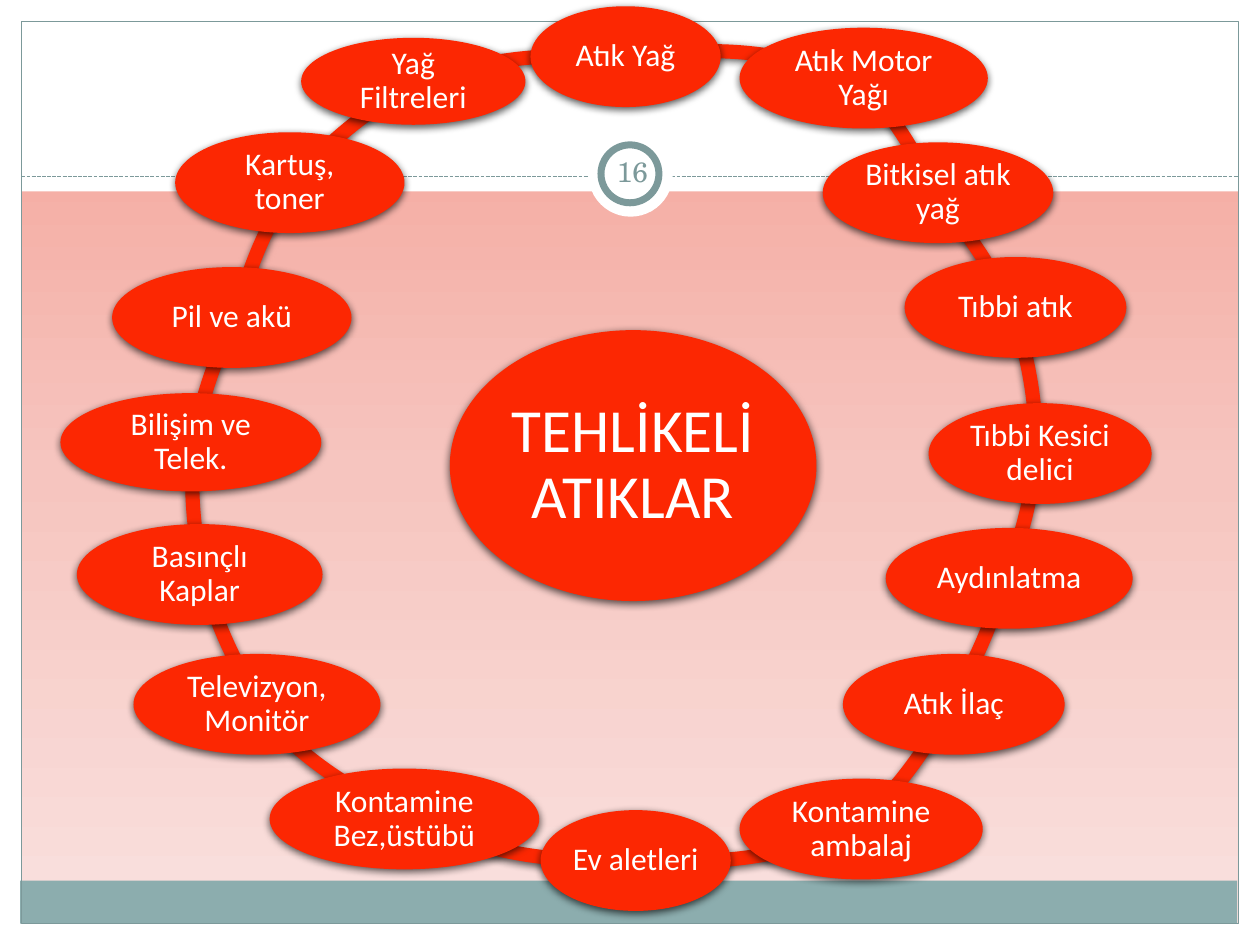
import pptx
import pptx.util
import pptx.dml.color
import pptx.enum.dml
import pptx.enum.shapes
import pptx.enum.text
import pptx.oxml
import pptx.oxml.ns
from pptx.util import Inches, Pt

RGBColor = pptx.dml.color.RGBColor
SHAPE = pptx.enum.shapes.MSO_SHAPE
WHITE = RGBColor(0xFF, 0xFF, 0xFF)
TEAL = RGBColor(0x7C, 0x99, 0x9A)
FOOTER_TEAL = RGBColor(0x8C, 0xAD, 0xAE)
RED = RGBColor(0xFC, 0x27, 0x02)
BACKGROUND_STOPS = [(0, "F4A095"), (50, "F6C5BF"), (100, "FAE2E0")]

ARC_SIZE = 6.6
ARC_THICKNESS = 0.017
ANGLE_UNIT = 0.6  # one degree, as a block arc adjustment

# Left, top, start and end angle in degrees, clockwise from the right
ARCS = [
    (1.18, 0.39, 248.31, 278.4),
    (1.52, 0.23, 219.55, 241.69),
    (1.74, -0.06, 192.7, 213.29),
    (1.44, 0.74, 189.45, 207.67),
    (1.47, 0.51, 166.85, 185.45),
    (1.46, 0.47, 146.31, 166.06),
    (1.17, 0.17, 114.89, 141.05),
    (1.38, 0.28, 83.73, 116.86),
    (2.2, 0.29, 66.02, 97.99),
    (1.33, 0.85, 25.95, 47.84),
    (1.52, 0.51, 13.86, 32.9),
    (1.69, 0.02, 4.88, 22.88),
    (1.68, 0.26, 340.07, 0.7),
    (1.76, 0.48, 316.5, 335.88),
    (1.14, -0.47, 317.39, 336.51),
    (2.33, 0.35, 258.2, 291.84),
]

# Waste type, left, top, width, height: clockwise from the top
WASTES = [
    ("Atık Yağ", 4.21, 0.05, 1.51, 0.8),
    ("Atık Motor Yağı", 5.87, 0.22, 1.97, 0.8),
    ("Bitkisel atık yağ", 6.53, 1.13, 1.83, 0.8),
    ("Tıbbi atık", 7.18, 2.04, 1.76, 0.8),
    ("Tıbbi Kesici delici", 7.37, 3.2, 1.77, 0.8),
    ("Aydınlatma", 7.03, 4.19, 1.96, 0.8),
    ("Atık İlaç", 6.69, 5.19, 1.76, 0.8),
    ("Kontamine ambalaj", 5.87, 6.18, 1.93, 0.8),
    ("Ev aletleri", 4.29, 6.43, 1.51, 0.8),
    ("Kontamine Bez,üstübü", 2.14, 6.1, 2.14, 0.8),
    ("Televizyon, Monitör", 1.06, 5.19, 1.96, 0.8),
    ("Basınçlı Kaplar", 0.61, 4.16, 1.95, 0.8),
    ("Bilişim ve Telek.", 0.48, 3.12, 2.07, 0.78),
    ("Pil ve akü", 0.89, 2.12, 1.9, 0.8),
    ("Kartuş, toner", 1.39, 1.05, 1.82, 0.8),
    ("Yağ Filtreleri", 2.39, 0.3, 1.78, 0.69),
]


def set_background(slide):
    fill = slide.background.fill
    fill.gradient()
    fill.gradient_angle = 270
    stops = slide.element.find(".//" + pptx.oxml.ns.qn("a:gsLst"))
    for stop in list(stops):
        stops.remove(stop)
    for percent, colour in BACKGROUND_STOPS:
        stops.append(pptx.oxml.parse_xml(
            f'<a:gs {pptx.oxml.ns.nsdecls("a")} pos="{percent * 1000}">'
            f'<a:srgbClr val="{colour}"/></a:gs>'))


def add_plain(slide, kind, left, top, width, height, fill=None, line=None, line_width=0.75):
    shape = slide.shapes.add_shape(
        kind, Inches(left), Inches(top), Inches(width), Inches(height))
    shape.shadow.inherit = False
    if fill is None:
        shape.fill.background()
    else:
        shape.fill.solid()
        shape.fill.fore_color.rgb = fill
    if line is None:
        shape.line.fill.background()
    else:
        shape.line.color.rgb = line
        shape.line.width = Pt(line_width)
    return shape


def add_red(slide, kind, left, top, width, height):
    """Red diagram part with a soft shadow below it."""
    shape = add_plain(slide, kind, left, top, width, height, RED)
    effects = shape.element.spPr.find(pptx.oxml.ns.qn("a:effectLst"))
    effects.append(pptx.oxml.parse_xml(
        f'<a:outerShdw {pptx.oxml.ns.nsdecls("a")} blurRad="{Pt(4.5)}" dist="{Pt(1.5)}" '
        'dir="5400000" rotWithShape="0"><a:srgbClr val="000000">'
        '<a:alpha val="63000"/></a:srgbClr></a:outerShdw>'))
    return shape


def write_centred(shape, text, size, font, colour, inset):
    frame = shape.text_frame
    frame.word_wrap = True
    frame.vertical_anchor = pptx.enum.text.MSO_ANCHOR.MIDDLE
    frame.margin_left = frame.margin_right = Inches(inset)
    frame.margin_top = frame.margin_bottom = Inches(inset)
    paragraph = frame.paragraphs[0]
    paragraph.text = text
    paragraph.alignment = pptx.enum.text.PP_ALIGN.CENTER
    paragraph.font.size = Pt(size)
    paragraph.font.name = font
    paragraph.font.color.rgb = colour
    return paragraph


def add_arc(slide, left, top, start, end):
    arc = add_red(slide, SHAPE.BLOCK_ARC, left, top, ARC_SIZE, ARC_SIZE)
    arc.adjustments[0] = start * ANGLE_UNIT
    arc.adjustments[1] = end * ANGLE_UNIT
    arc.adjustments[2] = ARC_THICKNESS


def add_node(slide, text, left, top, width, height, size=18, inset=0.03):
    node = add_red(slide, SHAPE.OVAL, left, top, width, height)
    write_centred(node, text, size, "Calibri", WHITE, inset).line_spacing = 0.9


def add_divider(slide):
    divider = slide.shapes.add_connector(
        pptx.enum.shapes.MSO_CONNECTOR.STRAIGHT,
        Inches(0.17), Inches(1.4), Inches(9.83), Inches(1.4))
    divider.line.color.rgb = TEAL
    divider.line.width = Pt(0.75)
    divider.line.dash_style = pptx.enum.dml.MSO_LINE.SQUARE_DOT
    divider.element.spPr.append(
        pptx.oxml.parse_xml(f'<a:effectLst {pptx.oxml.ns.nsdecls("a")}/>'))


def add_frame(slide):
    # White margins and header
    for margin in [(0, 7.33, 10, 0.17), (0, 0, 10, 1.52),
                   (0, 0, 0.17, 7.5), (9.83, 0, 0.17, 7.5)]:
        add_plain(slide, SHAPE.RECTANGLE, *margin, fill=WHITE)
    # Footer band, border and divider
    add_plain(slide, SHAPE.RECTANGLE, 0.16, 6.99, 9.66, 0.34, fill=FOOTER_TEAL)
    add_plain(slide, SHAPE.RECTANGLE, 0.17, 0.17, 9.66, 7.16, line=TEAL)
    add_divider(slide)


def add_page_number(slide):
    add_plain(slide, SHAPE.OVAL, 4.67, 1.05, 0.67, 0.67, fill=WHITE)
    add_plain(slide, SHAPE.OVAL, 4.77, 1.15, 0.46, 0.46, WHITE, TEAL, 4)
    number = slide.shapes.add_textbox(Inches(4.77), Inches(1.12), Inches(0.5), Inches(0.48))
    write_centred(number, "16", 16, "TeX Gyre Schola", TEAL, 0.05)


def main():
    deck = pptx.Presentation()
    deck.slide_width, deck.slide_height = Inches(10), Inches(7.5)
    slide = deck.slides.add_slide(deck.slide_layouts[6])
    set_background(slide)
    add_frame(slide)
    add_page_number(slide)
    # Ring of waste types around the central topic
    for arc in ARCS:
        add_arc(slide, *arc)
    add_node(slide, "TEHLİKELİ ATIKLAR", 3.57, 2.62, 2.91, 2.15, size=35, inset=0.05)
    for waste in WASTES:
        add_node(slide, *waste)
    deck.save("out.pptx")


if __name__ == "__main__":
    main()
